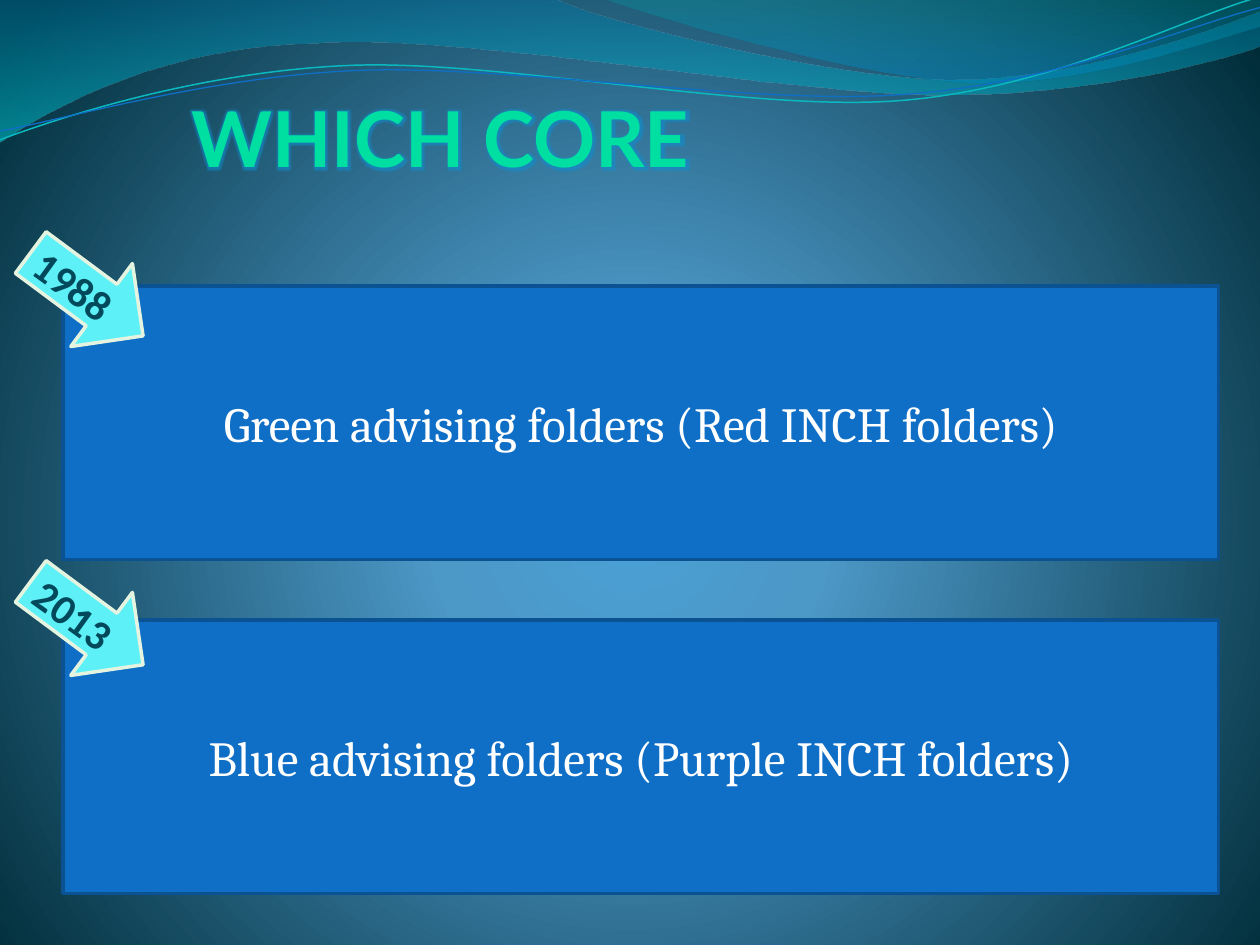
from lxml import etree
from pptx import Presentation
from pptx.dml.color import RGBColor
from pptx.enum.shapes import MSO_SHAPE
from pptx.enum.text import MSO_ANCHOR, MSO_AUTO_SIZE, PP_ALIGN
from pptx.oxml import parse_xml
from pptx.oxml.ns import nsdecls, qn
from pptx.util import Inches, Pt

RECT, DOWN_ARROW = MSO_SHAPE.RECTANGLE, MSO_SHAPE.DOWN_ARROW
MIDDLE, TOP = MSO_ANCHOR.MIDDLE, MSO_ANCHOR.TOP
CENTER, LEFT = PP_ALIGN.CENTER, PP_ALIGN.LEFT
GROW = MSO_AUTO_SIZE.SHAPE_TO_FIT_TEXT

THEME = {
    "title": ("Lato", 44, "00DFA2", True),
    "body": ("Cambria", 28, "FFFFFF", False),
    "year": ("Calibri", 24, "03495C", True),
    "glow": "0F8FD0",
    "panel": ("0F6FC6", "0B5292"),
    "arrow": ("5EF0F7", "E5F4E0"),
    "background": [(0, "4AA0D6", 100), (25, "4C98C7", 100), (100, "002C38", 100)],
    "wave_left": [(0, "0074A1", 45), (100, "00C6CF", 55)],
    "wave_right": [(0, "00A1A9", 30), (80, "008BBF", 45)],
    "curve_teal": "0AB8BF",
    "curve_blue": "0F6FC6",
}
LINEAR = '<a:lin ang="5400000" scaled="0"/>'
RADIAL = ('<a:path path="circle"><a:fillToRect l="10000" t="110000" '
          'r="10000" b="100000"/></a:path>')


def set_gradient(element, stops, direction):
    gs = "".join(
        f'<a:gs pos="{pos * 1000}"><a:srgbClr val="{color}">'
        f'<a:alpha val="{alpha * 1000}"/></a:srgbClr></a:gs>'
        for pos, color, alpha in stops)
    solid = element.find(".//" + qn("a:solidFill"))
    solid.getparent().replace(solid, parse_xml(
        f'<a:gradFill {nsdecls("a")} rotWithShape="1">'
        f'<a:gsLst>{gs}</a:gsLst>{direction}</a:gradFill>'))


def write(sp, text, style, align, anchor, wrap):
    tf = sp.text_frame
    tf.word_wrap = wrap
    tf.vertical_anchor = anchor
    p = tf.paragraphs[0]
    p.alignment = align
    r = p.add_run()
    r.text = text
    name, size, color, bold = THEME[style]
    r.font.name, r.font.size, r.font.bold = name, Pt(size), bold
    r.font.color.rgb = RGBColor.from_string(color)
    return r


prs = Presentation()
prs.slide_width, prs.slide_height = Inches(10), Inches(7.5)
s = prs.slides.add_slide(prs.slide_layouts[5])
s.background.fill.solid()
s.background.fill.fore_color.rgb = RGBColor.from_string("002C38")
set_gradient(s.element, THEME["background"], RADIAL)

waves = [
    ("wave_left", None, [
        (0, 0), (4.4, -0.01), (4.76, 0.17, 6.64, 0.63, 7.58, 0.63),
        (8.53, 0.63, 9.58, 0.26, 10, 0.09), (10.01, 0.36),
        (9.83, 0.44, 8.7, 0.76, 7.46, 0.75), (6.22, 0.75, 3.82, 0.28, 2.57, 0.34),
        (1.29, 0.36, 0.46, 0.83, -0.01, 1.13), (0, 0)]),
    ("wave_right", None, [
        (4.79, -0.01), (5.09, 0.11, 6.82, 0.62, 7.69, 0.65),
        (8.56, 0.69, 9.61, 0.32, 10, 0.21), (10, 0), (4.79, -0.01)]),
    ("curve_teal", 0.85, [
        (0, 1.11), (0.48, 0.93, 1.58, 0.57, 2.77, 0.52),
        (3.95, 0.47, 5.93, 0.89, 7.13, 0.8), (8.33, 0.71, 9.38, 0.15, 9.98, -0.02)]),
    ("curve_blue", 0.75, [
        (0, 1.04), (0.47, 0.96, 1.64, 0.61, 2.83, 0.56),
        (4.03, 0.51, 5.97, 0.84, 7.17, 0.75), (8.36, 0.67, 9.41, 0.21, 10, 0.06)]),
]
for style, width, segments in waves:
    points = [(Inches(seg[i]), Inches(seg[i + 1]))
              for seg in segments for i in range(0, len(seg), 2)]
    builder = s.shapes.build_freeform(*points[0])
    builder.add_line_segments(points[1:], close=width is None)
    sp = builder.convert_to_shape()
    sp.shadow.inherit = False
    lines = iter(list(sp.element.iter(qn("a:lnTo"))))
    for seg in segments[1:]:
        line = next(lines)
        if len(seg) == 6:
            line.tag = qn("a:cubicBezTo")
            for control in (next(lines), next(lines)):
                line.append(control[0])
                control.getparent().remove(control)
    if width is None:
        sp.line.fill.background()
        sp.fill.solid()
        sp.fill.fore_color.rgb = RGBColor.from_string(THEME[style][0][1])
        set_gradient(sp.element.spPr, THEME[style], LINEAR)
    else:
        sp.fill.background()
        sp.line.color.rgb = RGBColor.from_string(THEME[style])
        sp.line.width = Pt(width)

title = s.shapes.title
title.left, title.top, title.width, title.height = map(Inches, (1.42, 0.67, 4.25, 0.84))
title.element.spPr.append(parse_xml(
    f'<a:custGeom {nsdecls("a")}><a:avLst/><a:gdLst/><a:ahLst/><a:cxnLst/>'
    '<a:rect l="0" t="0" r="r" b="b"/><a:pathLst/></a:custGeom>'))
r = write(title, "WHICH CORE", "title", LEFT, TOP, False)
title.text_frame.auto_size = GROW
effects = etree.Element(qn("a:effectLst"))
glow = etree.SubElement(effects, qn("a:glow"), rad="63500")
color = etree.SubElement(glow, qn("a:srgbClr"), val=THEME["glow"])
etree.SubElement(color, qn("a:alpha"), val="60000")
r.font._element.find(qn("a:solidFill")).addnext(effects)
s.shapes._spTree.append(title.element)

cores = [
    ("1988", "Green advising folders (Red INCH folders)", 2.27, 1.78),
    ("2013", "Blue advising folders (Purple INCH folders)", 4.92, 4.39),
]
for year, text, panel_top, arrow_top in cores:
    group = s.shapes.add_group_shape()
    panel = group.shapes.add_shape(
        RECT, Inches(0.5), Inches(panel_top), Inches(9.17), Inches(2.17))
    arrow = group.shapes.add_shape(
        DOWN_ARROW, Inches(0.28), Inches(arrow_top), Inches(0.82), Inches(1.11))
    arrow.rotation = 306.6
    for sp, style in ((panel, "panel"), (arrow, "arrow")):
        fill, line = THEME[style]
        sp.shadow.inherit = False
        sp.fill.solid()
        sp.fill.fore_color.rgb = RGBColor.from_string(fill)
        sp.line.color.rgb = RGBColor.from_string(line)
        sp.line.width = Pt(2)
    write(panel, text, "body", CENTER, MIDDLE, True)
    label = group.shapes.add_textbox(
        Inches(0.13), Inches(arrow_top + 0.29), Inches(1.06), Inches(0.5))
    label.rotation = 35.9
    write(label, year, "year", LEFT, TOP, True)
    label.text_frame.auto_size = GROW

prs.save("out.pptx")
